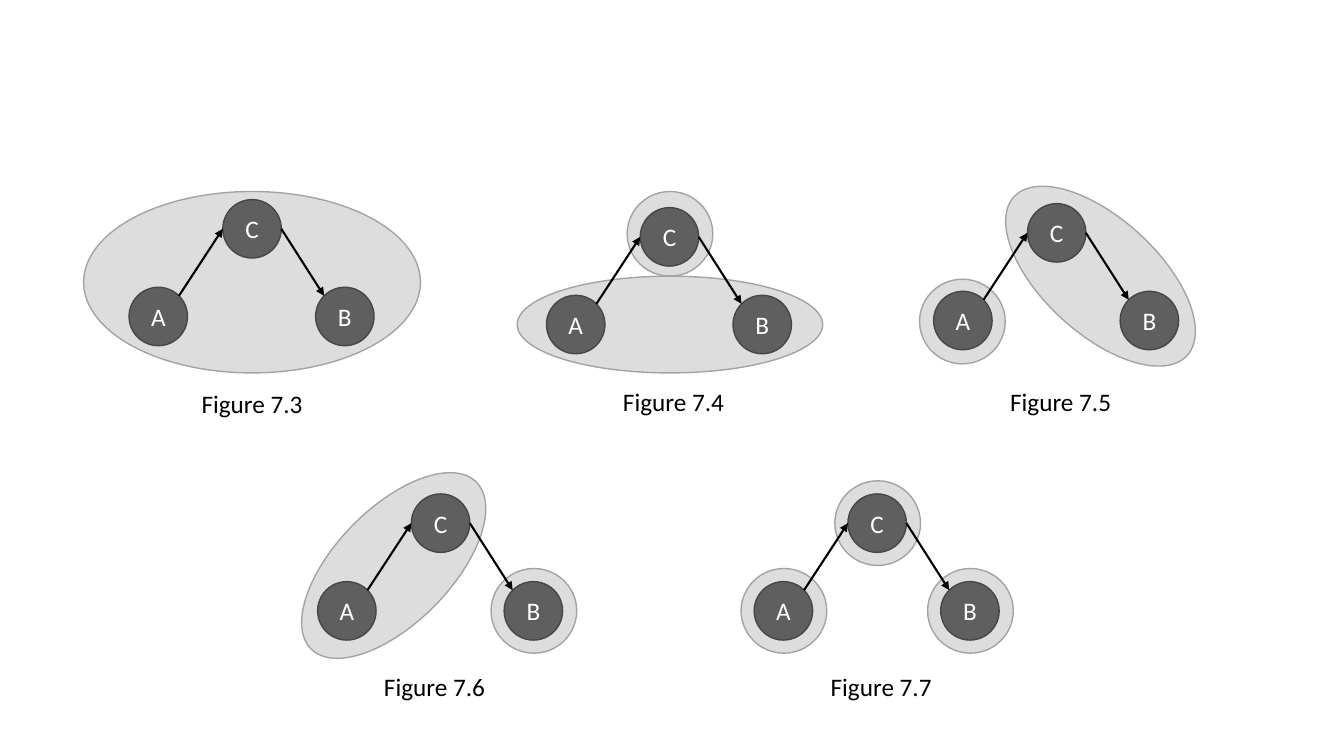
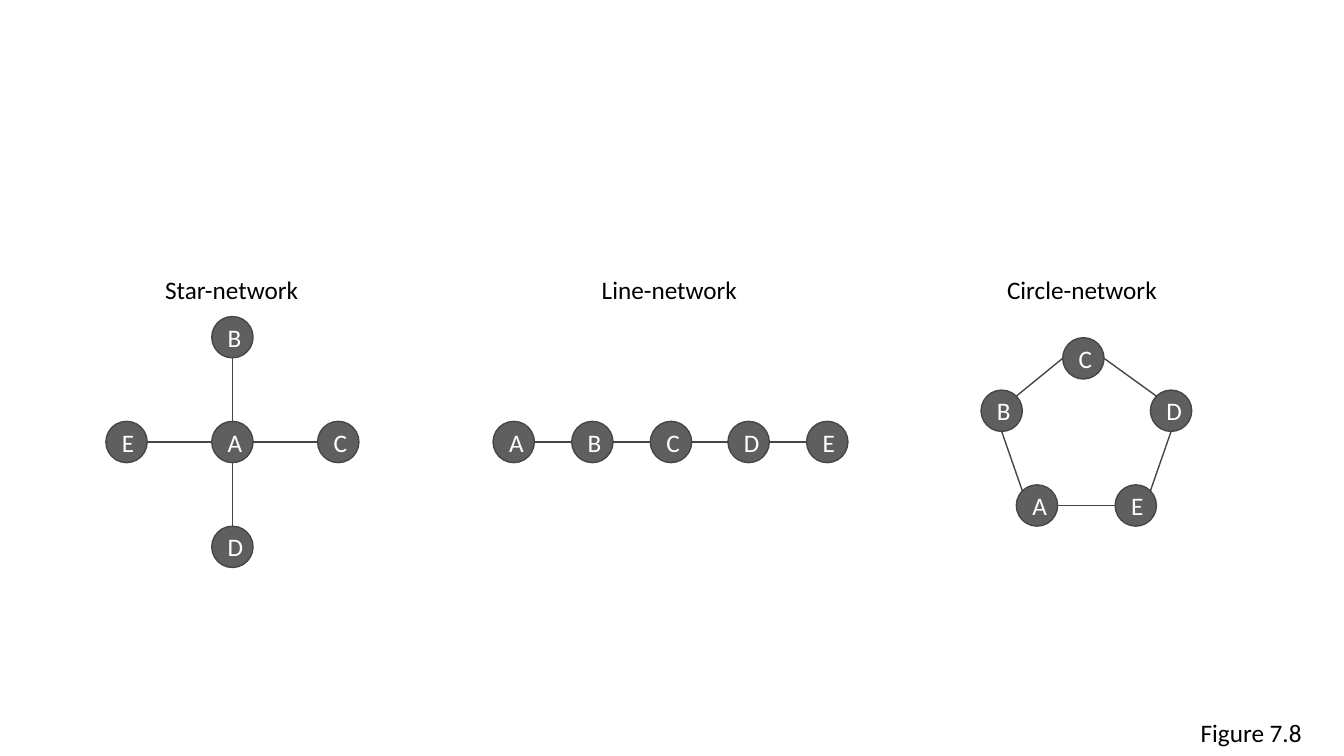
from math import cos, radians, sin

from lxml.etree import SubElement
from pptx import Presentation
from pptx.dml.color import RGBColor
from pptx.enum.shapes import MSO_CONNECTOR as CONNECTOR, MSO_SHAPE as SHAPE
from pptx.enum.text import MSO_ANCHOR as ANCHOR, MSO_AUTO_SIZE as AUTO_SIZE, PP_ALIGN as ALIGN
from pptx.oxml.ns import qn
from pptx.util import Pt

PX = 9144  # 100 px to the inch
FONT = "Calibri"
BLACK = RGBColor(0x00, 0x00, 0x00)
WHITE = RGBColor(0xFF, 0xFF, 0xFF)
NODE_FILL = RGBColor(0x5F, 0x5F, 0x5F)
NODE_LINE = RGBColor(0x46, 0x46, 0x46)
GROUP_FILL = RGBColor(0xDD, 0xDD, 0xDD)
GROUP_LINE = RGBColor(0xA3, 0xA3, 0xA3)

# Where a link meets a circle, in degrees clockwise from its right side
RIGHT, BOTTOM, LEFT, TOP_LEFT, TOP, TOP_RIGHT = 0, 90, 180, 225, 270, 315


def write(shape, text, *, color=BLACK, align=ALIGN.CENTER, wrap=True, grow=False):
    frame = shape.text_frame
    frame.word_wrap = wrap
    if grow:
        frame.auto_size = AUTO_SIZE.SHAPE_TO_FIT_TEXT
    else:
        frame.vertical_anchor = ANCHOR.MIDDLE
    paragraph = frame.paragraphs[0]
    paragraph.text = text
    paragraph.alignment = align
    paragraph.font.name = FONT
    paragraph.font.size = Pt(18)
    paragraph.font.color.rgb = color


def edge_point(corner, size, angle):
    radius = size / 2
    return [round((start + radius + radius * turn(radians(angle))) * PX)
            for start, turn in zip(corner, (cos, sin))]


# Groupings of a three-node chain: position of C, then groups as
# left, top, width, height, rotation
GROUPINGS = [
    ((221, 198), [(83, 190, 334, 180, 0)]),
    ((635, 206), [(622, 190, 85, 84, 0), (513, 274, 303, 96, 0)]),
    ((1019, 202), [(912, 277, 85, 84, 0), (975, 217, 233, 114, 42.5)]),
    ((408, 490), [(487, 564, 85, 84, 0), (274, 504, 233, 114, 314.6)]),
    ((841, 490), [(735, 564, 85, 84, 0), (828, 477, 85, 84, 0), (920, 564, 85, 84, 0)]),
]
chain_groups, chain_nodes, chain_links = [], {}, []
for figure, ((left, top), groups) in enumerate(GROUPINGS):
    chain_groups += groups
    for letter, dx, dy in (("A", -93, 87), ("B", 92, 87), ("C", 0, 0)):
        chain_nodes[figure, letter] = (left + dx, top + dy)
    chain_links += [((figure, "A"), TOP_RIGHT, (figure, "C"), LEFT),
                    ((figure, "C"), RIGHT, (figure, "B"), TOP_LEFT)]

# Star, line and circle networks
network_nodes = {
    ("star", "A"): (210, 418), ("star", "B"): (210, 314), ("star", "E"): (105, 418),
    ("star", "C"): (315, 418), ("star", "D"): (210, 522),
    ("circle", "A"): (1008, 481), ("circle", "B"): (973, 387), ("circle", "C"): (1054, 335),
    ("circle", "D"): (1141, 387), ("circle", "E"): (1106, 481),
}
for step, letter in enumerate("ABCDE"):
    network_nodes["line", letter] = (489 + round(step * 311 / 4), 418)

JOINTS = {
    "star": [("B", BOTTOM, "A", TOP), ("A", BOTTOM, "D", TOP),
             ("C", LEFT, "A", RIGHT), ("E", RIGHT, "A", LEFT)],
    "line": [(after, LEFT, before, RIGHT) for before, after in zip("ABCD", "BCDE")],
    "circle": [("B", BOTTOM, "A", TOP_LEFT), ("C", LEFT, "B", TOP_RIGHT),
               ("D", TOP_LEFT, "C", RIGHT), ("E", TOP_RIGHT, "D", BOTTOM),
               ("E", LEFT, "A", RIGHT)],
}
network_links = [((network, start), leave, (network, end), arrive)
                 for network, joints in JOINTS.items()
                 for start, leave, end, arrive in joints]

# Captions: text, left, top, width, alignment, wrap
chain_captions = [
    ("Figure 7.3", 174, 380, 152, ALIGN.CENTER, True),
    ("Figure 7.4", 592, 378, 152, ALIGN.CENTER, True),
    ("Figure 7.5", 976, 378, 152, ALIGN.CENTER, True),
    ("Figure 7.6", 371, 661, 152, ALIGN.LEFT, True),
    ("Figure 7.7", 798, 661, 152, ALIGN.CENTER, True),
]
network_captions = [
    ("Star-network", 154, 267, 153, ALIGN.LEFT, False),
    ("Line-network", 587, 267, 156, ALIGN.LEFT, False),
    ("Circle-network", 989, 267, 170, ALIGN.LEFT, False),
    ("Figure 7.8", 1181, 707, 152, ALIGN.LEFT, True),
]

# Groups, nodes, node size, links, link colour, link width, arrowheads, captions
DIAGRAMS = [
    (chain_groups, chain_nodes, 58, chain_links, BLACK, 1.5, True, chain_captions),
    ([], network_nodes, 41, network_links, NODE_LINE, 1, False, network_captions),
]

deck = Presentation()
deck.slide_width, deck.slide_height = 1333 * PX, 750 * PX

for groups, nodes, size, links, link_color, link_width, arrows, captions in DIAGRAMS:
    shapes = deck.slides.add_slide(deck.slide_layouts[6]).shapes

    # Groups behind, nodes in front
    ellipses = [(*group, "", GROUP_FILL, GROUP_LINE) for group in groups]
    ellipses += [(*corner, size, size, 0, letter, NODE_FILL, NODE_LINE)
                 for (_, letter), corner in nodes.items()]
    for left, top, width, height, rotation, letter, fill, outline in ellipses:
        ellipse = shapes.add_shape(SHAPE.OVAL, left * PX, top * PX, width * PX, height * PX)
        ellipse.rotation = rotation
        ellipse.shadow.inherit = False
        ellipse.fill.solid()
        ellipse.fill.fore_color.rgb = fill
        ellipse.line.color.rgb = outline
        ellipse.line.width = Pt(1)
        if letter:
            write(ellipse, letter, color=WHITE)

    # Links between nodes
    for start, leave, end, arrive in links:
        link = shapes.add_connector(CONNECTOR.STRAIGHT,
                                    *edge_point(nodes[start], size, leave),
                                    *edge_point(nodes[end], size, arrive))
        link.line.color.rgb = link_color
        link.line.width = Pt(link_width)
        if arrows:
            SubElement(link.line._get_or_add_ln(), qn("a:tailEnd"), type="triangle")
        SubElement(link._element.spPr, qn("a:effectLst"))

    # Captions
    for text, left, top, width, align, wrap in captions:
        caption = shapes.add_textbox(left * PX, top * PX, width * PX, 40 * PX)
        write(caption, text, align=align, wrap=wrap, grow=True)

deck.save("out.pptx")
